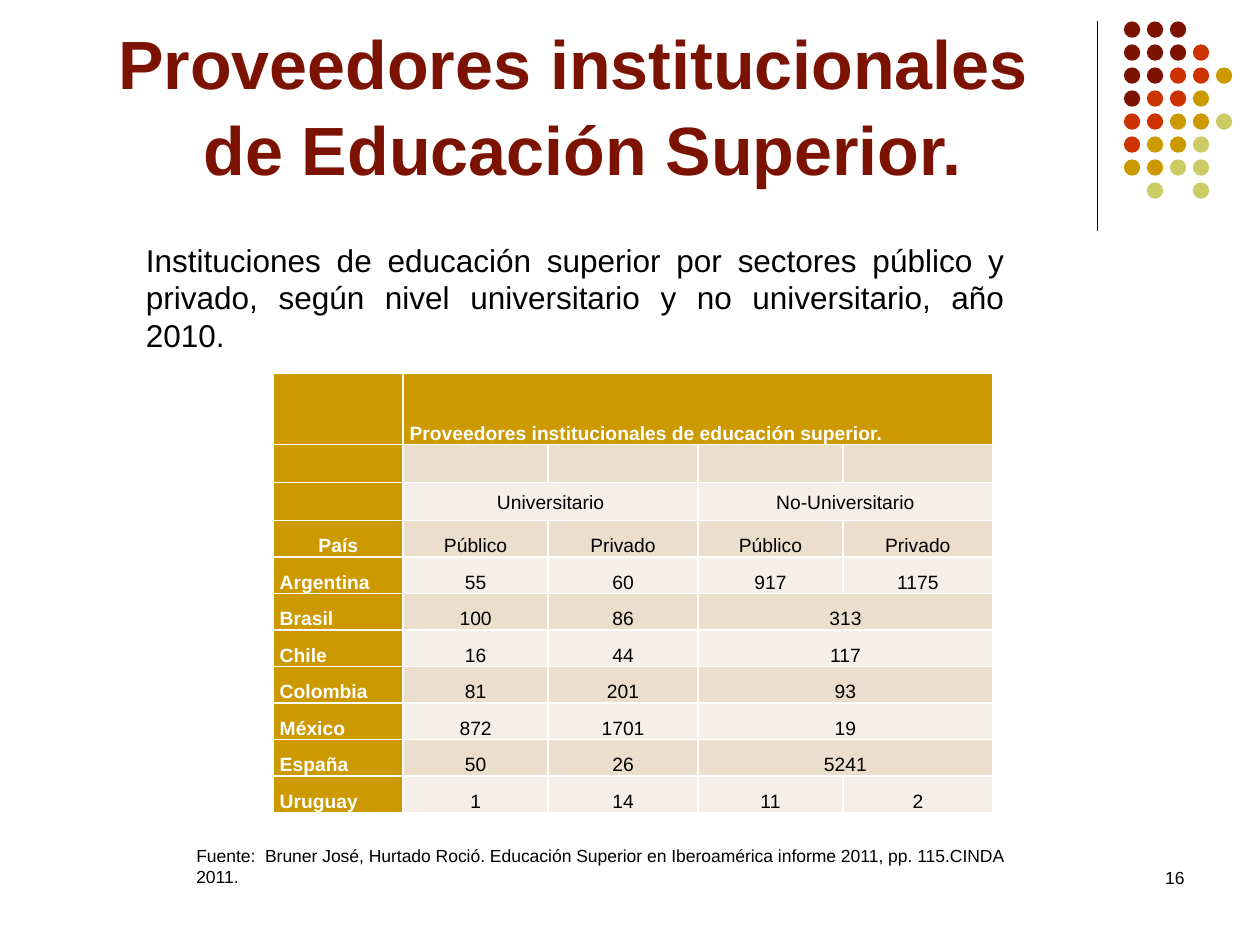
from lxml import etree
from pptx import Presentation
from pptx.dml.color import RGBColor
from pptx.enum.shapes import MSO_CONNECTOR, MSO_SHAPE
from pptx.enum.text import MSO_ANCHOR, PP_ALIGN
from pptx.oxml.ns import qn
from pptx.util import Inches, Pt

LEFT, CENTER, RIGHT, JUSTIFY = PP_ALIGN.LEFT, PP_ALIGN.CENTER, PP_ALIGN.RIGHT, PP_ALIGN.JUSTIFY
TOP, MIDDLE, BOTTOM = MSO_ANCHOR.TOP, MSO_ANCHOR.MIDDLE, MSO_ANCHOR.BOTTOM
OVAL = MSO_SHAPE.OVAL
STRAIGHT = MSO_CONNECTOR.STRAIGHT

COLORS = {
    "maroon": "7C1302",
    "red": "CC3300",
    "gold": "CC9900",
    "olive": "CCCC66",
    "band_dark": "ECDECC",
    "band_light": "F6EFE7",
    "black": "000000",
    "white": "FFFFFF",
}


def rgb(name):
    return RGBColor.from_string(COLORS[name])


def write(frame, text, size, color="black", bold=False, align=LEFT, spacing=None):
    frame.text = text
    paragraph = frame.paragraphs[0]
    paragraph.alignment = align
    paragraph.line_spacing = spacing
    for run in paragraph.runs:
        run.font.name = "Arial"
        run.font.size = Pt(size)
        run.font.bold = bold
        run.font.color.rgb = rgb(color)


prs = Presentation()
prs.slide_width, prs.slide_height = Inches(10), Inches(7.5)
slide = prs.slides.add_slide(prs.slide_layouts[6])

divider = slide.shapes.add_connector(STRAIGHT, Inches(8.71), Inches(0.17), Inches(8.71), Inches(1.83))
divider.line.color.rgb = rgb("black")
divider.line.width = Pt(0.75)
etree.SubElement(divider._element.spPr, qn("a:effectLst"))

DOT_ROWS = ["mmm", "mmmr", "mmrrg", "mrrg", "rrggo", "rggo", "ggoo", " o o"]
DOT_COLORS = {"m": "maroon", "r": "red", "g": "gold", "o": "olive"}
DOT_STEP = 0.73 / 4
dots = slide.shapes.add_group_shape()
for row, codes in enumerate(DOT_ROWS):
    for col, code in enumerate(codes):
        if code in DOT_COLORS:
            dot = dots.shapes.add_shape(
                OVAL, Inches(8.92 + col * DOT_STEP), Inches(0.17 + row * DOT_STEP),
                Inches(0.13), Inches(0.13))
            dot.shadow.inherit = False
            dot.fill.solid()
            dot.fill.fore_color.rgb = rgb(DOT_COLORS[code])
            dot.line.fill.background()

TEXTS = [
    ((0.5, 0.13, 8.25, 1.42), BOTTOM, "Proveedores institucionales  de Educación Superior.",
     dict(size=39, color="maroon", bold=True, align=CENTER, spacing=1.05)),
    ((1.06, 1.86, 7.01, 1.01), TOP,
     "Instituciones de educación superior por sectores público y privado, "
     "según nivel universitario y no universitario, año 2010.",
     dict(size=18, align=JUSTIFY)),
    ((1.46, 6.66, 6.77, 0.44), TOP,
     "Fuente:  Bruner José, Hurtado Roció. Educación Superior en Iberoamérica "
     "informe 2011, pp. 115.CINDA 2011.",
     dict(size=10)),
    ((7.17, 6.83, 2.33, 0.5), TOP, "16", dict(size=10, align=RIGHT)),
]
for place, anchor, text, style in TEXTS:
    frame = slide.shapes.add_textbox(*map(Inches, place)).text_frame
    frame.word_wrap = True
    frame.vertical_anchor = anchor
    write(frame, text, **style)

ROWS = [
    ["", "Proveedores institucionales de educación superior.", None, None, None],
    ["", "", "", "", ""],
    ["", "Universitario", None, "No-Universitario", None],
    ["País", "Público", "Privado", "Público", "Privado"],
    ["Argentina", "55", "60", "917", "1175"],
    ["Brasil", "100", "86", "313", None],
    ["Chile", "16", "44", "117", None],
    ["Colombia", "81", "201", "93", None],
    ["México", "872", "1701", "19", None],
    ["España", "50", "26", "5241", None],
    ["Uruguay", "1", "14", "11", "2"],
]
COL_WIDTHS = [1.03, 1.15, 1.19, 1.15, 1.19]
providers = slide.shapes.add_table(
    len(ROWS), len(COL_WIDTHS), Inches(2.17), Inches(2.96), Inches(5.71), Inches(3.47)).table
providers.first_col = True
for column, width in zip(providers.columns, COL_WIDTHS):
    column.width = Inches(width)

for r, values in enumerate(ROWS):
    providers.rows[r].height = Inches(0.57 if r == 0 else 0.29)
    for c, value in enumerate(values):
        cell = providers.cell(r, c)
        heading = r == 0 or c == 0
        cell.margin_left = cell.margin_right = Inches(0.05)
        cell.margin_top = cell.margin_bottom = 0
        cell.vertical_anchor = MIDDLE if r == 2 else BOTTOM
        cell.fill.solid()
        band = "band_dark" if r % 2 else "band_light"
        cell.fill.fore_color.rgb = rgb("gold" if heading else band)
        if value:
            write(cell.text_frame, value, 11, "white" if heading else "black", heading,
                  LEFT if heading and value != "País" else CENTER, 1.15)
            span = 1
            while c + span < len(values) and values[c + span] is None:
                span += 1
            if span > 1:
                cell.merge(providers.cell(r, c + span - 1))

prs.save("out.pptx")
